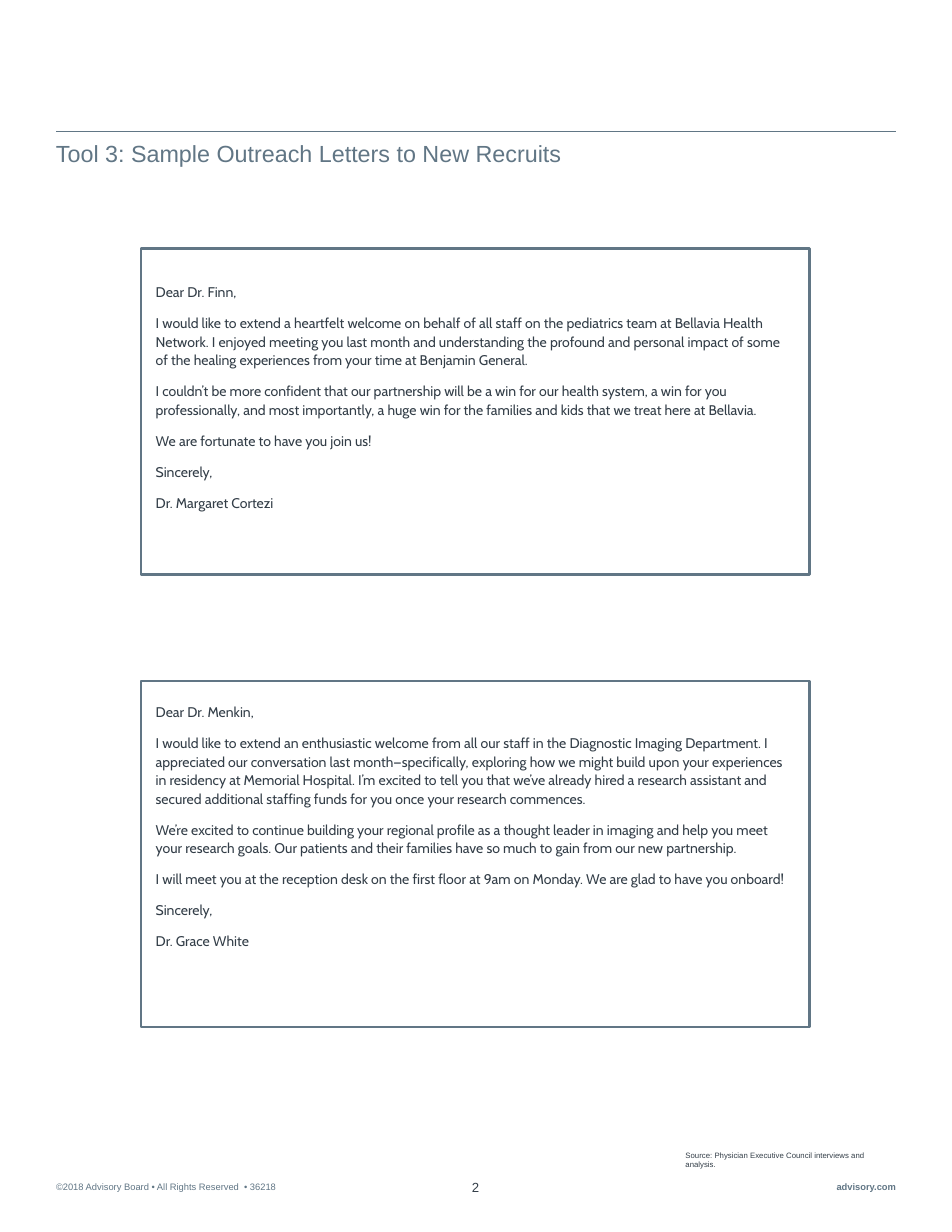
from dataclasses import dataclass

from lxml import etree
from pptx import Presentation
from pptx.dml.color import RGBColor
from pptx.enum import shapes, text
from pptx.oxml import ns
from pptx.util import Inches, Pt


@dataclass(frozen=True)
class Theme:
    slate: RGBColor = RGBColor(0x61, 0x76, 0x85)
    ink: RGBColor = RGBColor(0x33, 0x3E, 0x48)
    font: str = "Arial"
    letter_font: str = "Cabin"
    title_size: float = 15
    letter_size: float = 9
    number_size: float = 8.5
    footer_size: float = 6
    source_size: float = 5
    rule_width: float = 0.5
    frame_width: float = 1.5
    line_spacing: float = 1.1
    paragraph_gap: float = 8


THEME = Theme()
LEFT, RIGHT = 0.5, 8
FRAME_LEFT, FRAME_WIDTH = 1.26, 5.97
LETTER_LEFT, LETTER_WIDTH = 1.39, 5.62

FIRST_LETTER = [
    "Dear Dr. Finn,",
    "I would like to extend a heartfelt welcome on behalf of all staff on the pediatrics team at "
    "Bellavia Health Network. I enjoyed meeting you last month and understanding the profound and "
    "personal impact of some of the healing experiences from your time at Benjamin General.",
    "I couldn’t be more confident that our partnership will be a win for our health system, a win "
    "for you professionally, and most importantly, a huge win for the families and kids that we "
    "treat here at Bellavia.",
    "We are fortunate to have you join us!",
    "Sincerely,",
    "Dr. Margaret Cortezi",
]
SECOND_LETTER = [
    "Dear Dr. Menkin,",
    "I would like to extend an enthusiastic welcome from all our staff in the Diagnostic Imaging "
    "Department. I appreciated our conversation last month—specifically, exploring how we might "
    "build upon your experiences in residency at Memorial Hospital. I’m excited to tell you that "
    "we’ve already hired a research assistant and secured additional staffing funds for you once "
    "your research commences.",
    "We’re excited to continue building your regional profile as a thought leader in imaging and "
    "help you meet your research goals. Our patients and their families have so much to gain from "
    "our new partnership.",
    "I will meet you at the reception desk on the first floor at 9am on Monday. We are glad to "
    "have you onboard!",
    "Sincerely,",
    "Dr. Grace White",
]


def add_text(slide, box, paragraphs, size, color, font=THEME.font, bold=False,
             align=text.PP_ALIGN.LEFT, anchor=text.MSO_ANCHOR.TOP):
    frame = slide.shapes.add_textbox(*map(Inches, box)).text_frame
    frame.margin_left = frame.margin_top = frame.margin_right = frame.margin_bottom = 0
    frame.word_wrap = True
    frame.vertical_anchor = anchor
    frame.text = "\n".join(paragraphs)
    for paragraph in frame.paragraphs:
        paragraph.alignment = align
        for run in paragraph.runs:
            run.font.name = font
            run.font.size = Pt(size)
            run.font.bold = bold
            run.font.color.rgb = color
    return frame


def add_rule(slide, top):
    rule = slide.shapes.add_connector(
        shapes.MSO_CONNECTOR.STRAIGHT, Inches(LEFT), Inches(top), Inches(RIGHT), Inches(top))
    rule.line.color.rgb = THEME.slate
    rule.line.width = Pt(THEME.rule_width)
    etree.SubElement(rule._element.spPr, ns.qn("a:effectLst"))


def add_letter(slide, frame_top, frame_height, text_top, text_height, paragraphs):
    border = slide.shapes.add_shape(
        shapes.MSO_SHAPE.RECTANGLE, Inches(FRAME_LEFT), Inches(frame_top),
        Inches(FRAME_WIDTH), Inches(frame_height))
    border.shadow.inherit = False
    border.fill.background()
    border.line.color.rgb = THEME.slate
    border.line.width = Pt(THEME.frame_width)
    letter = add_text(slide, (LETTER_LEFT, text_top, LETTER_WIDTH, text_height), paragraphs,
                      THEME.letter_size, THEME.ink, THEME.letter_font)
    for index, paragraph in enumerate(letter.paragraphs):
        paragraph.line_spacing = THEME.line_spacing
        paragraph.space_before = Pt(THEME.paragraph_gap if index else 0)


def add_footer(slide):
    add_text(slide, (6.12, 10.28, 1.88, 0.16),
             ["Source: Physician Executive Council interviews and analysis."],
             THEME.source_size, THEME.ink, anchor=text.MSO_ANCHOR.BOTTOM)
    add_text(slide, (LEFT, 10.55, 1.98, 0.1),
             ["©2018 Advisory Board • All Rights Reserved  • 36218"],
             THEME.footer_size, THEME.slate)
    add_text(slide, (4.02, 10.53, 0.45, 0.14), ["2"],
             THEME.number_size, THEME.ink, align=text.PP_ALIGN.CENTER)
    add_text(slide, (7.14, 10.55, 0.86, 0.1), ["advisory.com"],
             THEME.footer_size, THEME.slate, bold=True, align=text.PP_ALIGN.RIGHT)


def main():
    presentation = Presentation()
    presentation.slide_width = Inches(8.5)
    presentation.slide_height = Inches(11)
    slide = presentation.slides.add_slide(presentation.slide_layouts[6])
    add_rule(slide, 1.17)
    add_text(slide, (LEFT, 1.24, RIGHT - LEFT, 0.25),
             ["Tool 3: Sample Outreach Letters to New Recruits"],
             THEME.title_size, THEME.slate)
    add_letter(slide, 2.22, 2.91, 2.52, 2.3, FIRST_LETTER)
    add_letter(slide, 6.08, 3.09, 6.27, 2.71, SECOND_LETTER)
    add_footer(slide)
    presentation.save("out.pptx")


if __name__ == "__main__":
    main()
